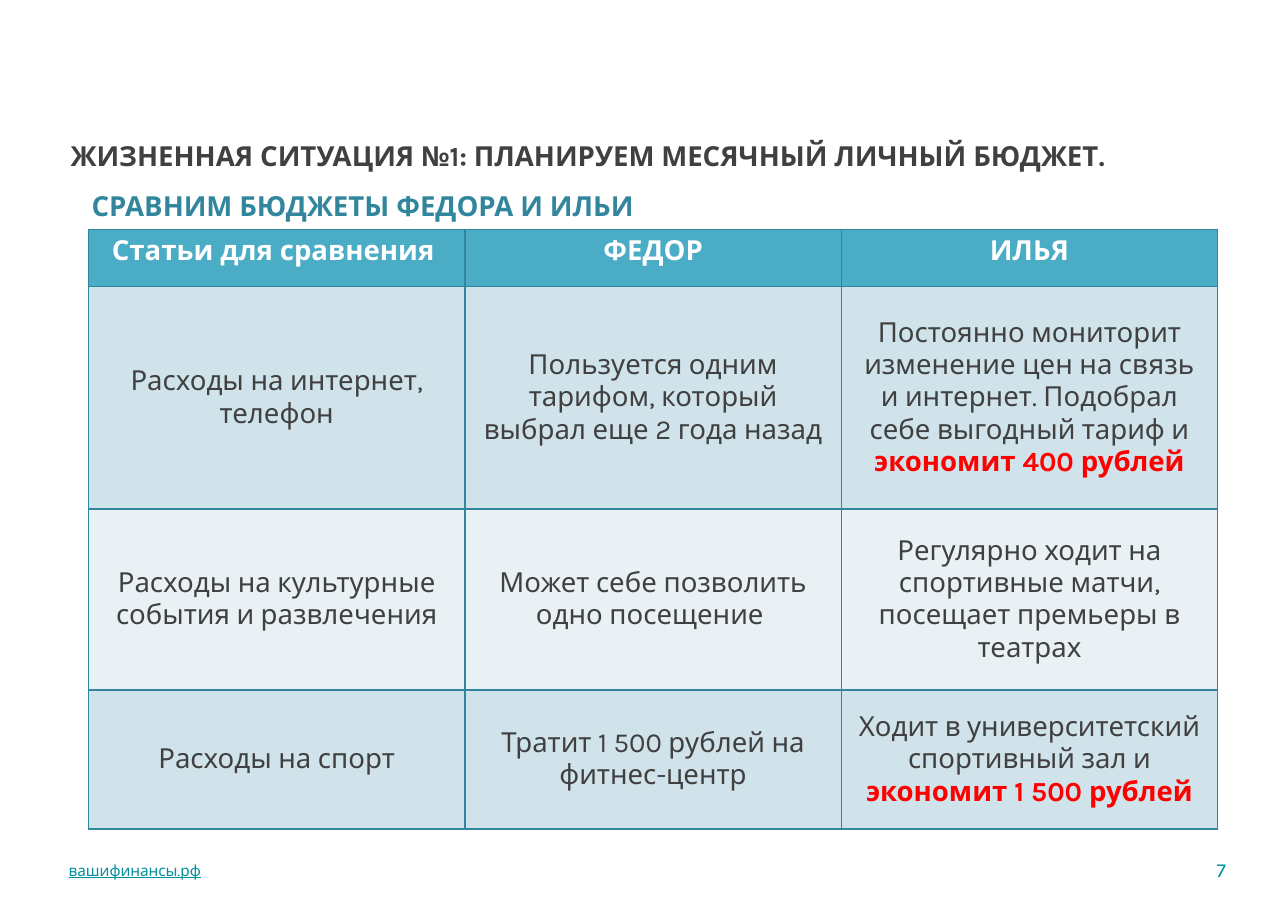
from dataclasses import dataclass

from lxml.etree import SubElement
from pptx import Presentation
from pptx.dml.color import RGBColor
from pptx.enum.text import MSO_ANCHOR as Anchor, PP_ALIGN as Align
from pptx.oxml.ns import qn
from pptx.util import Cm, Pt


@dataclass(frozen=True)
class Theme:
    font: str = "Karla"
    text: str = "404040"
    accent: str = "31859C"
    footer: str = "00909B"
    saving: str = "FF0000"
    header_text: str = "FFFFFF"
    header_fill: str = "4BACC6"
    bands: tuple = ("D0E3EA", "E9F1F5")
    body_size: int = 18
    link_size: int = 10
    number_size: int = 13


theme = Theme()


def write(para, text, size=theme.body_size, color=theme.text, bold=False, underline=False):
    span = para.add_run()
    span.text = text
    span.font.name = theme.font
    span.font.size = Pt(size)
    span.font.bold = bold
    span.font.underline = underline
    span.font.color.rgb = RGBColor.from_string(color)


def add_box(page, left, top, width, height, anchor=Anchor.MIDDLE, wrap=True):
    box = page.shapes.add_textbox(Cm(left), Cm(top), Cm(width), Cm(height))
    frame = box.text_frame
    frame.word_wrap = wrap
    frame.vertical_anchor = anchor
    frame.margin_left = frame.margin_right = Cm(0.13)
    frame.margin_top = frame.margin_bottom = Cm(0.13)
    return frame


deck = Presentation()
deck.slide_width, deck.slide_height = Cm(29.67), Cm(20.98)
page = deck.slides.add_slide(deck.slide_layouts[6])

link = add_box(page, 1.45, 19.69, 10.08, 0.71)
write(link.paragraphs[0], "вашифинансы.рф", size=theme.link_size, color=theme.footer, underline=True)

title = add_box(page, 1.5, 2.69, 26.72, 2.21, anchor=Anchor.TOP)
heading = title.paragraphs[0]
subheading = title.add_paragraph()
subheading._p.get_or_add_pPr().set("marL", str(Cm(0.48)))
heading.line_spacing = subheading.line_spacing = 1.5
write(heading, "ЖИЗНЕННАЯ СИТУАЦИЯ №1: ПЛАНИРУЕМ МЕСЯЧНЫЙ ЛИЧНЫЙ БЮДЖЕТ.", bold=True)
write(subheading, "СРАВНИМ БЮДЖЕТЫ ФЕДОРА И ИЛЬИ", color=theme.accent, bold=True)

number = add_box(page, 27.81, 19.61, 0.56, 0.84, wrap=False)
number.paragraphs[0].alignment = Align.RIGHT
write(number.paragraphs[0], "7", size=theme.number_size, color=theme.footer)

comparison = [
    [("Статьи для сравнения ",), ("ФЕДОР",), ("ИЛЬЯ",)],
    [
        ("Расходы на интернет, телефон",),
        ("Пользуется одним тарифом, который выбрал еще 2 года назад",),
        (
            "Постоянно мониторит изменение цен на связь и интернет. "
            "Подобрал себе выгодный тариф и ",
            "экономит 400 рублей",
        ),
    ],
    [
        ("Расходы на культурные события и развлечения",),
        ("Может себе позволить одно посещение ",),
        ("Регулярно ходит на спортивные матчи, посещает премьеры в театрах",),
    ],
    [
        ("Расходы на спорт",),
        ("Тратит 1 500 рублей на фитнес-центр",),
        ("Ходит в университетский спортивный зал и ", "экономит 1 500 рублей"),
    ],
]
row_heights = [1.31, 5.12, 4.17, 3.2]
column_width = 8.67

table = page.shapes.add_table(
    len(comparison), 3, Cm(2.04), Cm(5.29), Cm(3 * column_width), Cm(sum(row_heights))
).table
for column in table.columns:
    column.width = Cm(column_width)

for row_index, row in enumerate(comparison):
    table.rows[row_index].height = Cm(row_heights[row_index])
    is_header = row_index == 0
    fill = theme.header_fill if is_header else theme.bands[(row_index - 1) % 2]
    for column_index, (text, *savings) in enumerate(row):
        cell = table.cell(row_index, column_index)
        cell.vertical_anchor = Anchor.TOP if is_header else Anchor.MIDDLE
        properties = cell._tc.get_or_add_tcPr()
        for side in ("lnL", "lnR", "lnT", "lnB"):
            border = SubElement(properties, qn(f"a:{side}"), w=str(Pt(1)))
            solid = SubElement(border, qn("a:solidFill"))
            SubElement(solid, qn("a:srgbClr"), val=theme.accent)
        cell.fill.solid()
        cell.fill.fore_color.rgb = RGBColor.from_string(fill)
        para = cell.text_frame.paragraphs[0]
        para.alignment = Align.CENTER
        write(para, text, color=theme.header_text if is_header else theme.text, bold=is_header)
        for saving in savings:
            write(para, saving, color=theme.saving, bold=True)

deck.save("out.pptx")
